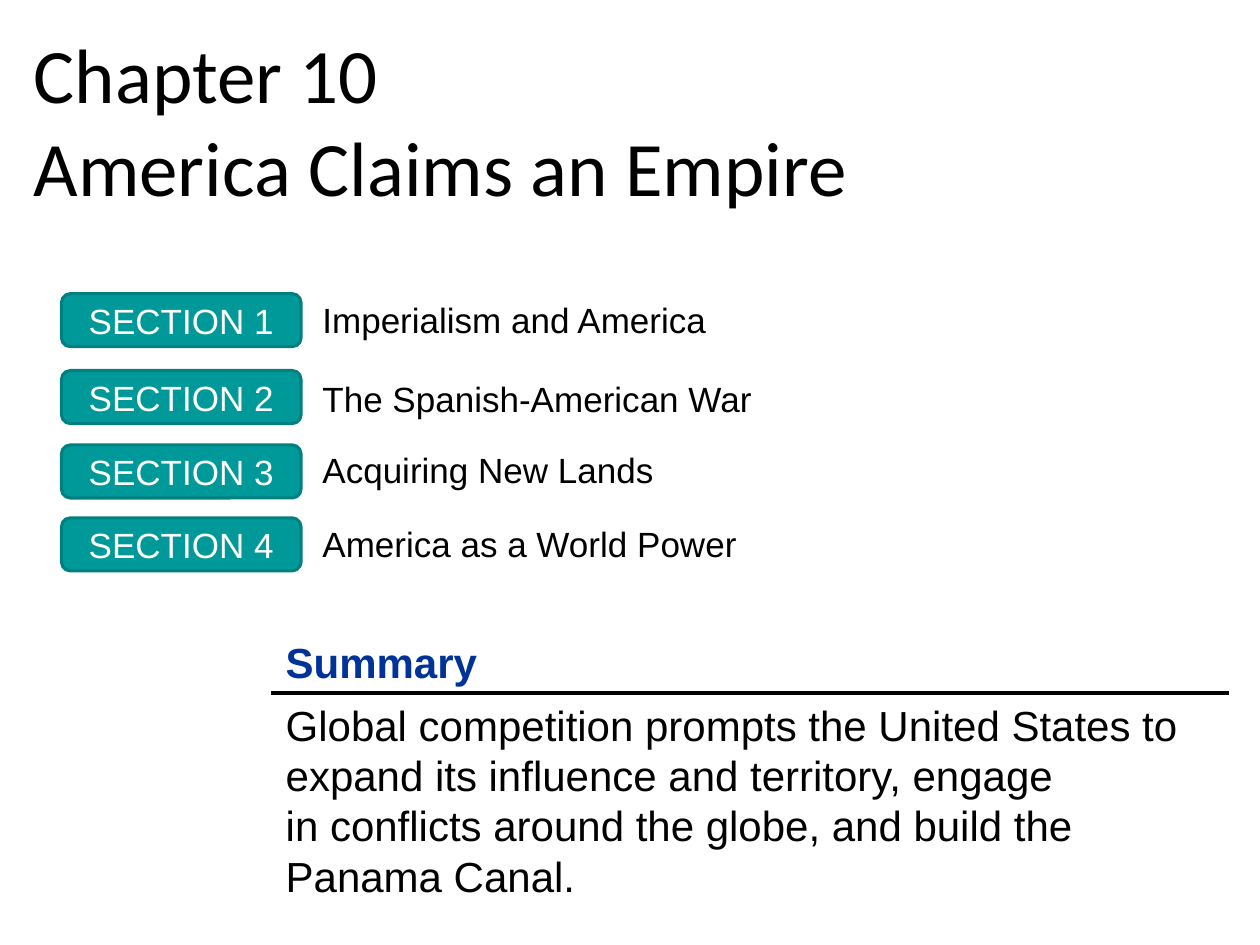
from dataclasses import dataclass

from lxml.etree import SubElement
from pptx import Presentation
from pptx.dml.color import RGBColor as RGB
from pptx.enum.shapes import MSO_CONNECTOR as CONN, MSO_SHAPE as SHAPE
from pptx.enum.text import MSO_ANCHOR as ANCHOR, PP_ALIGN as ALIGN
from pptx.oxml.ns import qn
from pptx.util import Cm, Pt

TITLE = ["Chapter 10", "America Claims an Empire"]
# Section name, top of its badge and top of its label, in cm
SECTIONS = [
    ("Imperialism and America", 5.92, 5.89),
    ("The Spanish-American War", 7.47, 7.49),
    ("Acquiring New Lands", 8.97, 8.92),
    ("America as a World Power", 10.44, 10.41),
]
SUMMARY_HEAD = "Summary"
SUMMARY = [
    "Global competition prompts the United States to expand its influence "
    "and territory, engage ",
    "in conflicts around the globe, and build the Panama Canal.",
]


@dataclass(frozen=True)
class Theme:
    text: RGB = RGB(0, 0, 0)
    heading: RGB = RGB(0x00, 0x33, 0x99)
    badge: RGB = RGB(0x00, 0x99, 0x99)
    badge_edge: RGB = RGB(0x00, 0x80, 0x80)
    badge_text: RGB = RGB(255, 255, 255)
    title_font: str = "Calibri"
    body_font: str = "Arial"
    title_size: int = 44
    summary_size: int = 24
    section_size: int = 20


T = Theme()


def write(sp, lines, size, color=T.text, font=T.body_font, bold=False,
          align=ALIGN.LEFT, anchor=ANCHOR.TOP, wrap=True):
    """Fill a shape with one paragraph, with a line break between lines."""
    tf = sp.text_frame
    tf.word_wrap = wrap
    tf.vertical_anchor = anchor
    p = tf.paragraphs[0]
    p.alignment = align
    for i, line in enumerate(lines):
        if i:
            p.add_line_break()
        r = p.add_run()
        r.text = line
        r.font.name, r.font.size, r.font.bold = font, Pt(size), bold
        r.font.color.rgb = color


def add_text(s, box, lines, size, **style):
    write(s.shapes.add_textbox(*map(Cm, box)), lines, size, **style)


def add_badge(s, box, label):
    sp = s.shapes.add_shape(SHAPE.ROUNDED_RECTANGLE, *map(Cm, box))
    sp.shadow.inherit = False
    sp.fill.solid()
    sp.fill.fore_color.rgb = T.badge
    sp.line.color.rgb = T.badge_edge
    sp.line.width = Pt(1.75)
    write(sp, [label], T.section_size, color=T.badge_text,
          align=ALIGN.CENTER, anchor=ANCHOR.MIDDLE, wrap=False)


def add_rule(s, left, right, y):
    line = s.shapes.add_connector(CONN.STRAIGHT, Cm(left), Cm(y), Cm(right), Cm(y))
    line.line.color.rgb = T.text
    line.line.width = Pt(2.25)
    SubElement(line._element.spPr, qn("a:effectLst"))


def main():
    prs = Presentation()
    prs.slide_width, prs.slide_height = Cm(25.4), Cm(19.05)
    s = prs.slides.add_slide(prs.slide_layouts[6])

    add_text(s, (0.43, 0.36, 21.59, 4.09), TITLE, T.title_size,
             font=T.title_font, anchor=ANCHOR.MIDDLE)

    for n, (name, badge_top, label_top) in enumerate(SECTIONS, 1):
        add_badge(s, (1.24, badge_top, 4.83, 1.07), f"SECTION {n}")
        add_text(s, (6.25, label_top, 9.2, 1.09), [name], T.section_size)

    add_text(s, (5.51, 12.7, 4.47, 1.27), [SUMMARY_HEAD], T.summary_size,
             color=T.heading, bold=True)
    add_rule(s, 5.46, 24.77, 13.97)
    add_text(s, (5.51, 13.97, 18.57, 4.32), SUMMARY, T.summary_size)

    prs.save("out.pptx")


if __name__ == "__main__":
    main()
